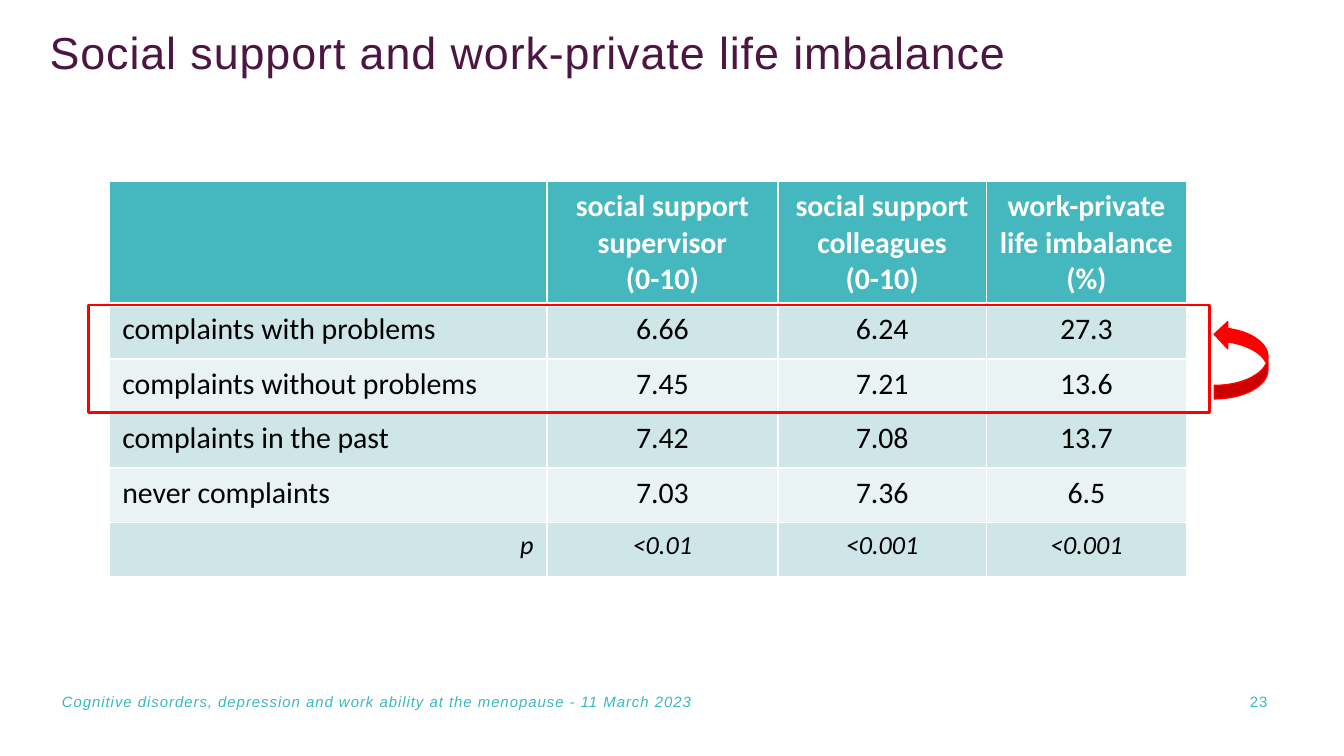
from lxml.etree import SubElement
from pptx import Presentation
from pptx.dml.color import RGBColor
from pptx.enum.shapes import MSO_SHAPE as Shape
from pptx.enum.text import MSO_ANCHOR as Anchor, MSO_AUTO_SIZE as Fit, PP_ALIGN as Align
from pptx.oxml import parse_xml
from pptx.oxml.ns import nsdecls, qn
from pptx.util import Pt

PLUM, TEAL, AQUA, RED = "4D1642", "44B8BE", "37B9C2", "FF0000"
BANDS = "CFE6E8", "E9F3F4"
HEADS = ["", "social support supervisor\n(0-10)", "social support colleagues\n(0-10)",
         "work-private life imbalance (%)"]
ROWS = [
    ["complaints with problems", "6.66", "6.24", "27.3"],
    ["complaints without problems", "7.45", "7.21", "13.6"],
    ["complaints in the past", "7.42", "7.08", "13.7"],
    ["never complaints", "7.03", "7.36", "6.5"],
    ["p", "<0.01", "<0.001", "<0.001"],
]
WIDTHS = 234.7, 123.8, 111.6, 107.3
HEAD, STEP = 65, 29.2


def tint(code):
    """Turn a hex string into a colour."""
    return RGBColor.from_string(code)


def put(item, values):
    """Set attributes of an item from a dict."""
    for key, value in values.items():
        setattr(item, key, value)


def write(frame, text, look, color, align=Align.LEFT, gap=None):
    """Fill a frame with styled text, one paragraph per line."""
    frame.text = text
    for para in frame.paragraphs:
        para.alignment = align
        for run in para.runs:
            put(run.font, look)
            run.font.color.rgb = tint(color)
            if gap:
                run.font._element.set("spc", str(gap))


def edge(cell, low):
    """Draw white borders round a cell, with the given bottom width."""
    props = cell._tc.get_or_add_tcPr()
    for spot, (side, width) in enumerate(zip("LRTB", (1, 1, 1, low))):
        props.insert(spot, parse_xml(
            f'<a:ln{side} {nsdecls("a")} w="{Pt(width)}"><a:solidFill>'
            f'<a:srgbClr val="FFFFFF"/></a:solidFill></a:ln{side}>'))


def title(slide, left, top, width, height):
    """Place the slide title."""
    shape = slide.shapes.title
    put(shape, dict(left=Pt(left), top=Pt(top), width=Pt(width), height=Pt(height)))
    frame = shape.text_frame
    put(frame, dict(margin_left=0, margin_top=0, margin_right=0, margin_bottom=0,
                    word_wrap=True, auto_size=Fit.NONE, vertical_anchor=Anchor.TOP))
    write(frame, "Social support and work-private life imbalance",
          dict(name="Arial", size=Pt(24), bold=False), PLUM, gap=50)
    frame.paragraphs[0].line_spacing = 0.8


def grid(slide, left, top):
    """Place the table of scores."""
    data = [HEADS] + ROWS
    high = HEAD + STEP * len(ROWS)
    table = slide.shapes.add_table(len(data), len(HEADS), Pt(left), Pt(top),
                                   Pt(sum(WIDTHS)), Pt(high)).table
    for col, width in zip(table.columns, WIDTHS):
        col.width = Pt(width)
    for row, line in enumerate(data):
        first, last = row == 0, row == len(ROWS)
        table.rows[row].height = Pt(HEAD if first else STEP)
        look = dict(name="Calibri", size=Pt(14 if last else 16), bold=first, italic=last)
        side = Align.RIGHT if last else Align.LEFT
        for col, text in enumerate(line):
            cell = table.cell(row, col)
            cell.fill.solid()
            cell.fill.fore_color.rgb = tint(TEAL if first else BANDS[(row - 1) % 2])
            edge(cell, 3 if first else 1)
            write(cell.text_frame, text, look, "FFFFFF" if first else "000000",
                  Align.CENTER if col else side)


def mark(slide, left, top, width, height):
    """Frame two rows in red and add a curved arrow beside them."""
    shapes = slide.shapes
    frame = shapes.add_shape(Shape.RECTANGLE, Pt(left), Pt(top), Pt(width), Pt(height))
    frame.fill.background()
    arrow = shapes.add_shape(Shape.CURVED_LEFT_ARROW, Pt(left + width + 2.5),
                             Pt(top + 8.5), Pt(28.8), Pt(41.8))
    arrow.fill.solid()
    arrow.fill.fore_color.rgb = tint(RED)
    arrow._element.spPr.find(qn("a:xfrm")).set("flipV", "1")
    for shape, line in ((frame, 1.5), (arrow, 0.75)):
        shape.shadow.inherit = False
        shape.line.color.rgb = tint(RED)
        shape.line.width = Pt(line)


def footer(slide, left, top, width, height):
    """Place the event line at the left and the page number at the right."""
    event = "Cognitive disorders, depression and work ability at the menopause - 11 March 2023"
    for text, shift, wide, side, slant in (
            (event, 0, 577.4, Align.LEFT, True),
            ("23", width - 119, 119, Align.RIGHT, False)):
        frame = slide.shapes.add_textbox(Pt(left + shift), Pt(top), Pt(wide),
                                         Pt(height)).text_frame
        put(frame, dict(word_wrap=True, vertical_anchor=Anchor.MIDDLE))
        if slant:
            put(frame, dict(margin_left=0, margin_top=0, margin_right=0, margin_bottom=0))
        write(frame, text, dict(name="Arial", size=Pt(8), italic=slant), AQUA, side, 50)


def main():
    """Build and save the slide."""
    deck = Presentation()
    put(deck, dict(slide_width=Pt(720), slide_height=Pt(405)))
    slide = deck.slides.add_slide(deck.slide_layouts[5])
    title(slide, 26.6, 18.7, 531.4, 43.9)
    grid(slide, 58.3, 97.2)
    footer(slide, 33.1, 365, 653, 21.6)
    mark(slide, 47.5, 163.4, 600.5, 57.6)
    deck.save("out.pptx")


if __name__ == "__main__":
    main()
